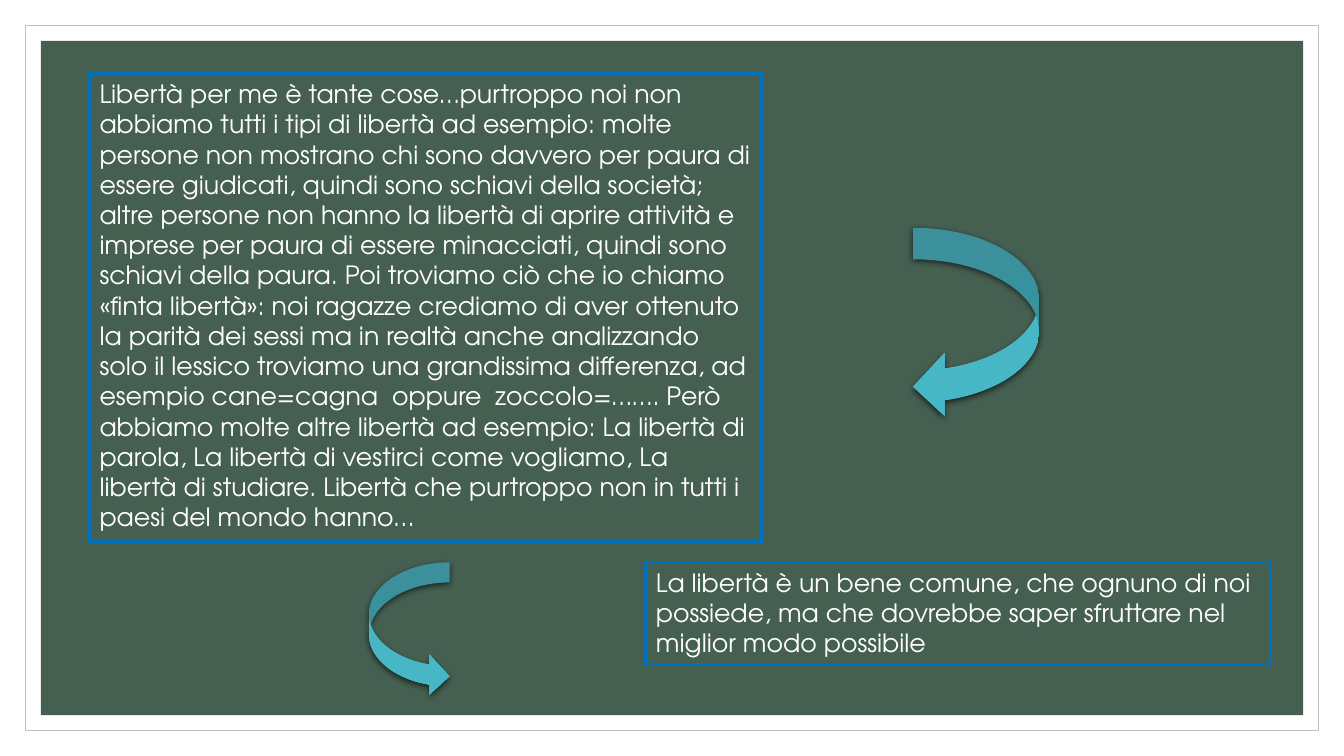
from lxml import etree
from copy import deepcopy
from pptx import Presentation
from pptx.dml.color import RGBColor
from pptx.enum.shapes import MSO_SHAPE as Preset
from pptx.enum.text import MSO_ANCHOR as Anchor, MSO_AUTO_SIZE as AutoSize
from pptx.oxml.ns import qn
from pptx.util import Cm, Pt

WHITE = RGBColor(0xFF, 0xFF, 0xFF)
FRAME_GREY = RGBColor(0xBF, 0xBF, 0xBF)
PANEL_GREEN = RGBColor(0x45, 0x5F, 0x51)
BORDER_BLUE = RGBColor(0x00, 0x70, 0xC0)
ARROW_TOP = RGBColor(0x4A, 0xB5, 0xC4)
ARROW_MIDDLE = RGBColor(0x47, 0xB7, 0xC6)
ARROW_BOTTOM = RGBColor(0x46, 0xB6, 0xC5)

SLIDE_WIDTH, SLIDE_HEIGHT = 33.87, 19.05
FRAME_MARGIN, PANEL_INSET = 0.65, 0.38
TEXT_FORMAT = {"name": "TeX Gyre Adventor", "size": Pt(18)}
ARROW_SHADOW = {"blurRad": Pt(4.5), "dist": Pt(1.5), "dir": 90 * 60000,
                "algn": "ctr", "rotWithShape": 0}

REFLECTION = (
    "Libertà per me è tante cose…purtroppo noi non abbiamo tutti i tipi di libertà "
    "ad esempio: molte persone non mostrano chi sono davvero per paura di essere "
    "giudicati, quindi sono schiavi della società; altre persone non hanno la libertà "
    "di aprire attività e imprese per paura di essere minacciati, quindi sono schiavi "
    "della paura. Poi troviamo ciò che io chiamo «finta libertà»: noi ragazze crediamo "
    "di aver ottenuto la parità dei sessi ma in realtà anche analizzando solo il lessico "
    "troviamo una grandissima differenza, ad esempio cane=cagna  oppure  zoccolo=……. "
    "Però abbiamo molte altre libertà ad esempio: La libertà di parola, La libertà di "
    "vestirci come vogliamo, La libertà di studiare. Libertà che purtroppo non in tutti "
    "i paesi del mondo hanno…"
)
CONCLUSION = (
    "La libertà è un bene comune, che ognuno di noi possiede, ma che dovrebbe saper "
    "sfruttare nel miglior modo possibile"
)


def add_plain_shape(page, preset, box):
    """Add a shape without shadow or outline in a box given in centimetres."""
    shape = page.shapes.add_shape(preset, *(Cm(length) for length in box))
    shape.shadow.inherit = False
    shape.line.fill.background()
    return shape


def add_backdrop(page, box):
    """Draw the thin white frame and the green panel inset in it."""
    left, top, width, height = box
    frame = add_plain_shape(page, Preset.RECTANGLE, box)
    frame.fill.solid()
    frame.fill.fore_color.rgb = WHITE
    frame.line.color.rgb = FRAME_GREY
    frame.line.width = Pt(0.5)
    panel_box = (left + PANEL_INSET, top + PANEL_INSET,
                 width - 2 * PANEL_INSET, height - 2 * PANEL_INSET)
    panel = add_plain_shape(page, Preset.RECTANGLE, panel_box)
    panel.fill.solid()
    panel.fill.fore_color.rgb = PANEL_GREEN


def add_bordered_text(page, box, words, border):
    """Write a white paragraph in a blue outlined box."""
    left, top, width, height = (Cm(length) for length in box)
    text_box = page.shapes.add_textbox(left, top, width, height)
    text_box.line.color.rgb = BORDER_BLUE
    text_box.line.width = Pt(border)
    body = text_box.text_frame
    settings = {"word_wrap": True, "auto_size": AutoSize.SHAPE_TO_FIT_TEXT,
                "vertical_anchor": Anchor.TOP}
    for name, value in settings.items():
        setattr(body, name, value)
    span = body.paragraphs[0].add_run()
    span.text = words
    for name, value in TEXT_FORMAT.items():
        setattr(span.font, name, value)
    span.font.color.rgb = WHITE


def add_curved_arrow(page, box, preset):
    """Draw a turquoise gradient arrow with a soft shadow below it."""
    arrow = add_plain_shape(page, preset, box)
    arrow.fill.gradient()
    arrow.fill.gradient_angle = 270
    properties = arrow.element.spPr
    stop_list = properties.find(qn("a:gradFill")).find(qn("a:gsLst"))
    stop_list.insert(1, deepcopy(stop_list[0]))
    colours = (ARROW_TOP, ARROW_MIDDLE, ARROW_BOTTOM)
    for index, (stop, colour) in enumerate(zip(arrow.fill.gradient_stops, colours)):
        stop.position = index / 2
        stop.color.rgb = colour
    effects = properties.find(qn("a:effectLst"))
    shadow = etree.SubElement(effects, qn("a:outerShdw"))
    for name, value in ARROW_SHADOW.items():
        shadow.set(name, str(value))
    black = etree.SubElement(shadow, qn("a:srgbClr"), val="000000")
    etree.SubElement(black, qn("a:alpha"), val="63000")


def main():
    """Build the slide about freedom and save it."""
    deck = Presentation()
    deck.slide_width, deck.slide_height = Cm(SLIDE_WIDTH), Cm(SLIDE_HEIGHT)
    page = deck.slides.add_slide(deck.slide_layouts[6])
    add_backdrop(page, (FRAME_MARGIN, FRAME_MARGIN,
                        SLIDE_WIDTH - 2 * FRAME_MARGIN,
                        SLIDE_HEIGHT - 2 * FRAME_MARGIN))
    add_bordered_text(page, (2.26, 1.85, 16.94, 11.79), REFLECTION, 3)
    add_bordered_text(page, (16.28, 14.17, 15.75, 2.57), CONCLUSION, 2.25)
    add_curved_arrow(page, (9.3, 14.17, 2.03, 3.38), Preset.CURVED_RIGHT_ARROW)
    add_curved_arrow(page, (23.01, 5.74, 3.18, 4.8), Preset.CURVED_LEFT_ARROW)
    deck.save("out.pptx")


if __name__ == "__main__":
    main()
